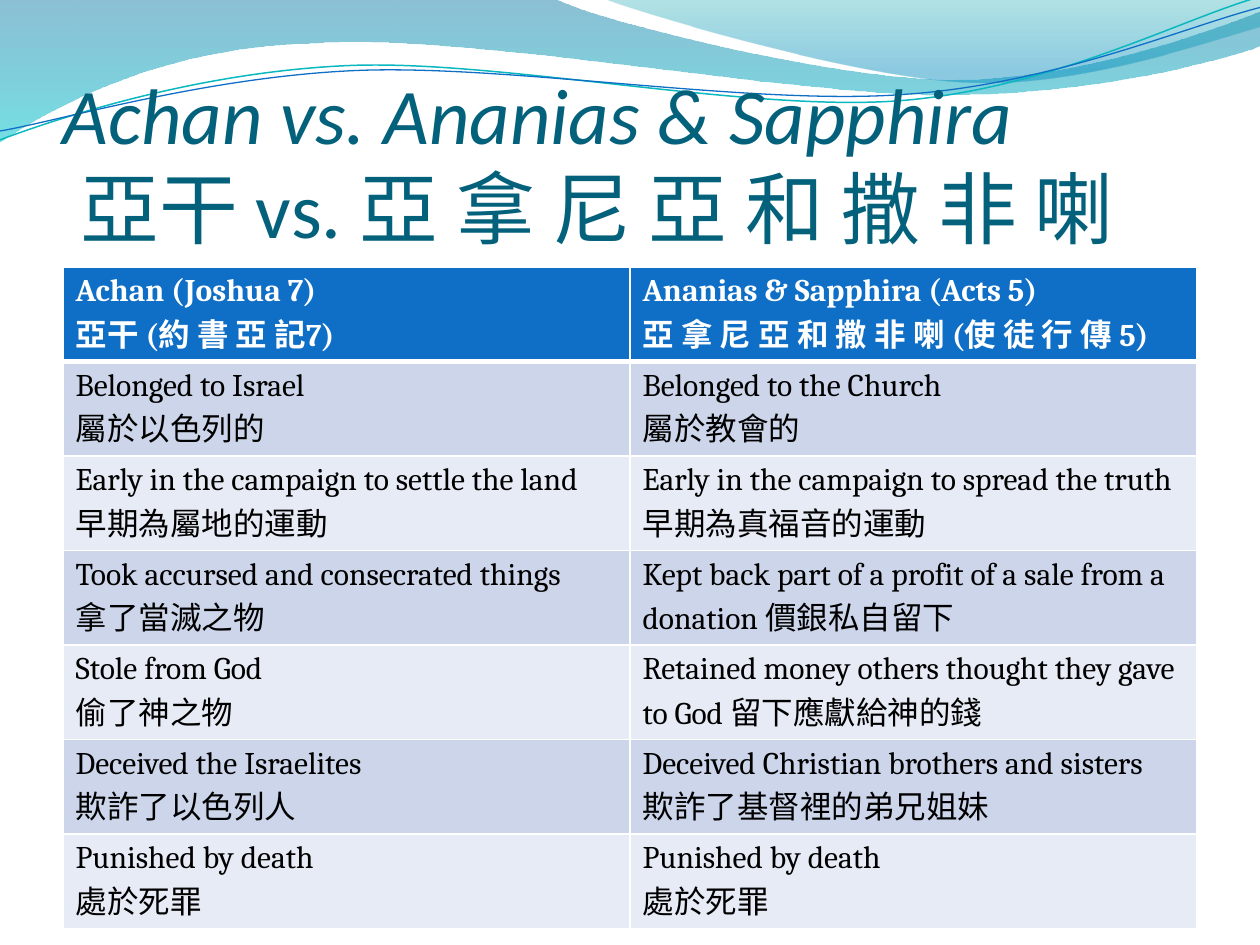
from dataclasses import dataclass
from math import cos, radians, sin

from lxml import etree
from pptx import Presentation
from pptx.dml.color import RGBColor
from pptx.enum.text import MSO_ANCHOR
from pptx.oxml.ns import qn
from pptx.util import Inches, Pt

BOTTOM = MSO_ANCHOR.BOTTOM
WIDTH, HEIGHT = 10, 7.5
MARGIN = WIDTH / 20
CONTENT_WIDTH = WIDTH - 2 * MARGIN
ROW_HEIGHT = HEIGHT / 10
TILT = 2.7
WHITE, BLACK, BLUE, TEAL = "FFFFFF", "000000", "0F6FC6", "04617B"
BANDS = ("E7EBF5", "CCD5EA")

Point = tuple[float, float]


@dataclass(frozen=True)
class Stop:
    position: float
    color: str
    opacity: int


@dataclass(frozen=True)
class Wave:
    start: Point
    segments: tuple[tuple[float, ...], ...]
    stops: tuple[Stop, ...] = ()
    line_color: str = ""
    line_width: float = 0
    center: Point = (0, 0)


@dataclass(frozen=True)
class Comparison:
    achan: tuple[str, ...]
    ananias: tuple[str, ...]


WAVES = (
    Wave(
        (0, 0),
        (
            (4.4, -0.01),
            (4.76, 0.17, 6.64, 0.63, 7.58, 0.63),
            (8.53, 0.63, 9.58, 0.26, 10, 0.09),
            (10.01, 0.36),
            (9.83, 0.44, 8.7, 0.76, 7.46, 0.75),
            (6.22, 0.75, 3.82, 0.28, 2.57, 0.34),
            (1.29, 0.36, 0.46, 0.83, -0.01, 1.13),
            (0, 0),
        ),
        stops=(Stop(0, "0074A1", 45), Stop(1, "00C6CF", 55)),
    ),
    Wave(
        (4.79, -0.01),
        (
            (5.09, 0.11, 6.82, 0.62, 7.69, 0.65),
            (8.56, 0.69, 9.61, 0.32, 10, 0.21),
            (10, 0),
            (4.79, -0.01),
        ),
        stops=(Stop(0, "00A1A9", 30), Stop(0.8, "008BBF", 45)),
    ),
    Wave(
        (0, 1.11),
        (
            (0.48, 0.93, 1.58, 0.57, 2.77, 0.52),
            (3.95, 0.47, 5.93, 0.89, 7.13, 0.8),
            (8.33, 0.71, 9.38, 0.15, 9.98, -0.02),
        ),
        line_color="0AB8BF",
        line_width=0.85,
        center=(4.99, 0.58),
    ),
    Wave(
        (0, 1.04),
        (
            (0.47, 0.96, 1.64, 0.61, 2.83, 0.56),
            (4.03, 0.51, 5.97, 0.84, 7.17, 0.75),
            (8.36, 0.67, 9.41, 0.21, 10, 0.06),
        ),
        line_color=BLUE,
        line_width=0.75,
        center=(5, 0.59),
    ),
)

COMPARISONS = (
    Comparison(
        ("Achan (Joshua 7)", "亞干 (約 書 亞 記7)"),
        ("Ananias & Sapphira (Acts 5)", "亞 拿 尼 亞 和 撒 非 喇 (使 徒 行 傳 5)"),
    ),
    Comparison(
        ("Belonged to Israel", "屬於以色列的"),
        ("Belonged to the Church", "屬於教會的"),
    ),
    Comparison(
        ("Early in the campaign to settle the land", "早期為屬地的運動"),
        ("Early in the campaign to spread the truth 早期為真福音的運動",),
    ),
    Comparison(
        ("Took accursed and consecrated things", "拿了當滅之物"),
        ("Kept back part of a profit of a sale from a donation 價銀私自留下",),
    ),
    Comparison(
        ("Stole from God", "偷了神之物"),
        ("Retained money others thought they gave to God 留下應獻給神的錢",),
    ),
    Comparison(
        ("Deceived the Israelites", "欺詐了以色列人"),
        ("Deceived Christian brothers and sisters", "欺詐了基督裡的弟兄姐妹"),
    ),
    Comparison(("Punished by death", "處於死罪"), ("Punished by death", "處於死罪")),
)


def rgb(color: str) -> RGBColor:
    return RGBColor.from_string(color)


def set_values(target, values: dict) -> None:
    for name, value in values.items():
        setattr(target, name, value)


def add_run(paragraph, text: str, color: str, values: dict) -> None:
    run = paragraph.add_run()
    run.text = text
    set_values(run.font, values)
    run.font.color.rgb = rgb(color)


def level(point: Point, center: Point) -> Point:
    dx, dy = point[0] - center[0], point[1] - center[1]
    cosine, sine = cos(radians(TILT)), sin(radians(TILT))
    return center[0] + dx * cosine - dy * sine, center[1] + dx * sine + dy * cosine


def add_curve(slide, wave: Wave):
    points = [wave.start]
    for segment in wave.segments:
        points += zip(segment[::2], segment[1::2])
    if wave.line_color:
        points = [level(point, wave.center) for point in points]
    start, *rest = [(Inches(x), Inches(y)) for x, y in points]
    builder = slide.shapes.build_freeform(*start)
    builder.add_line_segments(rest, close=bool(wave.stops))
    shape = builder.convert_to_shape()
    edges = iter(list(shape.element.iter(qn("a:lnTo"))))
    for segment in wave.segments:
        edge = next(edges)
        if len(segment) == 6:
            edge.tag = qn("a:cubicBezTo")
            for _ in range(2):
                follower = next(edges)
                edge.append(follower[0])
                follower.getparent().remove(follower)
    return shape


def draw_wave(slide, wave: Wave) -> None:
    shape = add_curve(slide, wave)
    shape.shadow.inherit = False
    if wave.line_color:
        shape.rotation = 360 - TILT
        shape.fill.background()
        shape.line.color.rgb = rgb(wave.line_color)
        shape.line.width = Pt(wave.line_width)
        return
    shape.line.fill.background()
    shape.fill.gradient()
    shape.fill.gradient_angle = 270
    for gradient_stop, stop in zip(shape.fill.gradient_stops, wave.stops):
        gradient_stop.position = stop.position
        gradient_stop.color.rgb = rgb(stop.color)
    for color, stop in zip(shape.element.spPr.iter(qn("a:srgbClr")), wave.stops):
        etree.SubElement(color, qn("a:alpha"), val=str(stop.opacity * 1000))


def draw_title(slide) -> None:
    box = slide.shapes.add_textbox(
        Inches(MARGIN), Inches(0.77), Inches(CONTENT_WIDTH), Inches(1.25)
    )
    insets = {"margin_left": 0, "margin_right": 0, "margin_top": Inches(0.05), "margin_bottom": 0}
    set_values(box.text_frame, insets | {"word_wrap": True, "vertical_anchor": BOTTOM})
    paragraph = box.text_frame.paragraphs[0]
    style = {"name": "Calibri", "size": Pt(45)}
    add_run(paragraph, "Achan vs. Ananias & Sapphira", TEAL, style | {"italic": True})
    paragraph.add_line_break()
    add_run(paragraph, " 亞干 vs. 亞 拿 尼 亞 和 撒 非 喇", TEAL, style | {"italic": False})


def draw_cell(cell, lines: tuple[str, ...], row: int) -> None:
    header = row == 0
    properties = cell._tc.get_or_add_tcPr()
    for side in ("lnL", "lnR", "lnT", "lnB"):
        width = Pt(3 if (row, side) in ((0, "lnB"), (1, "lnT")) else 1)
        border = etree.SubElement(properties, qn(f"a:{side}"), w=str(width))
        fill = etree.SubElement(border, qn("a:solidFill"))
        etree.SubElement(fill, qn("a:srgbClr"), val=WHITE)
    cell.fill.solid()
    cell.fill.fore_color.rgb = rgb(BLUE if header else BANDS[row % 2])
    style = {"name": "Cambria", "size": Pt(18), "bold": header}
    for index, line in enumerate(lines):
        frame = cell.text_frame
        paragraph = frame.add_paragraph() if index else frame.paragraphs[0]
        add_run(paragraph, line, WHITE if header else BLACK, style)


def draw_table(slide) -> None:
    count = len(COMPARISONS)
    area = (MARGIN, 2.12, CONTENT_WIDTH, ROW_HEIGHT * count)
    table = slide.shapes.add_table(count, 2, *map(Inches, area)).table
    for row, comparison in enumerate(COMPARISONS):
        for column, lines in enumerate((comparison.achan, comparison.ananias)):
            draw_cell(table.cell(row, column), lines, row)


def main() -> None:
    deck = Presentation()
    set_values(deck, {"slide_width": Inches(WIDTH), "slide_height": Inches(HEIGHT)})
    slide = deck.slides.add_slide(deck.slide_layouts[6])
    for wave in WAVES:
        draw_wave(slide, wave)
    draw_title(slide)
    draw_table(slide)
    deck.save("out.pptx")


if __name__ == "__main__":
    main()
